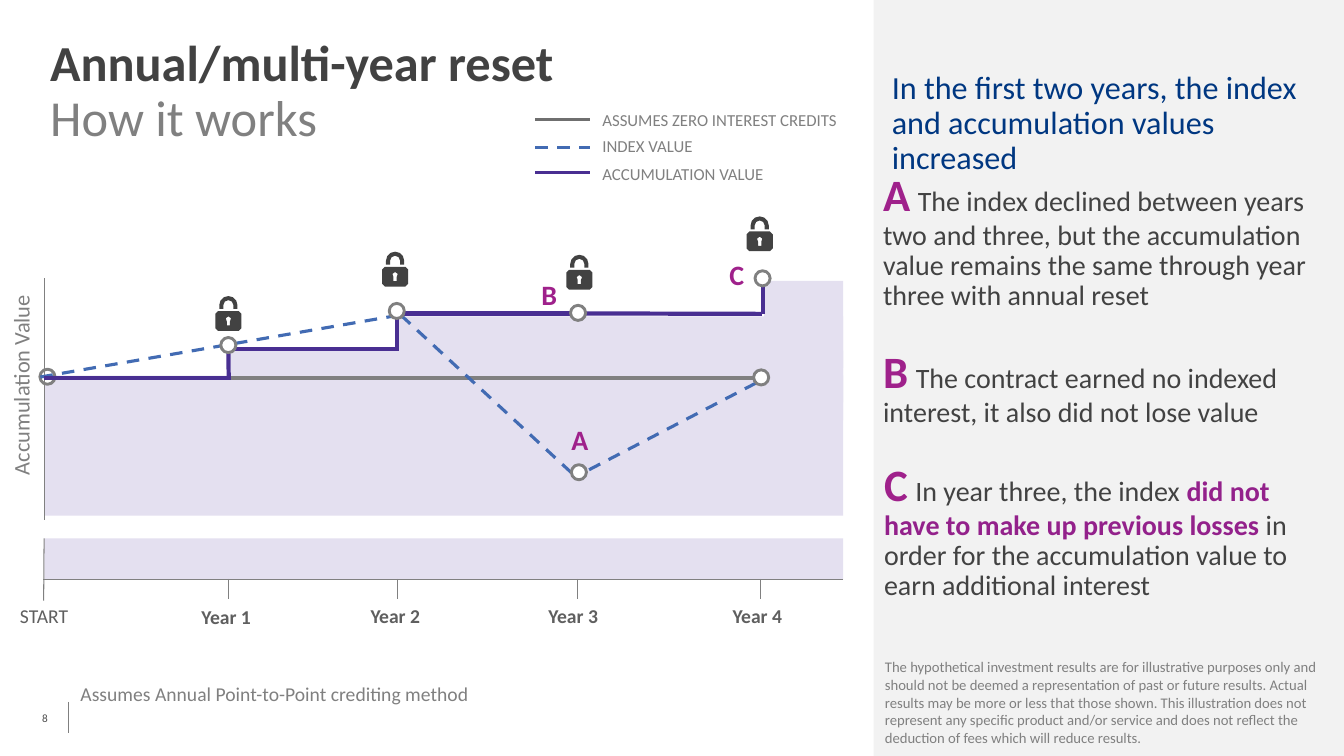
"""Build the annual/multi-year reset slide with its step diagram and side panel."""
from dataclasses import dataclass
from math import cos, radians, sin
from typing import Optional

from lxml.etree import SubElement
from pptx import Presentation
from pptx.dml.color import RGBColor
from pptx.enum.dml import MSO_LINE
from pptx.enum.shapes import MSO_CONNECTOR, MSO_SHAPE
from pptx.enum.text import MSO_ANCHOR, PP_ALIGN
from pptx.oxml.ns import qn
from pptx.util import Pt


@dataclass(frozen=True)
class Theme:
    """Colours, font and type sizes of the slide."""
    font: str = "Calibri"
    white: str = "FFFFFF"
    panel: str = "F2F2F2"
    band: str = "E4E0F0"
    dark: str = "424242"
    grey: str = "808080"
    zero: str = "6F6F6F"
    axis_text: str = "5F5F5F"
    page: str = "4D4D4D"
    navy: str = "003781"
    gap_color: str = "113388"
    index: str = "426BB3"
    accum: str = "492F92"
    magenta: str = "9F218B"
    stress: str = "93218B"
    title: float = 36
    letter: float = 32
    gap: float = 24
    heading: float = 23
    body: float = 20
    axis: float = 16
    label: float = 14
    legend: float = 12
    small: float = 10.5
    number: float = 8


T = Theme()


@dataclass(frozen=True)
class Span:
    """A run of text in one style."""
    text: str
    size: float
    color: str
    bold: bool = False


@dataclass(frozen=True)
class Text:
    """A text box with its paragraphs of spans."""
    x: float
    y: float
    w: float
    h: float
    paras: tuple[tuple[Span, ...], ...]
    spacing: Optional[float] = 0.9
    rotation: float = 0
    centred: bool = False


@dataclass(frozen=True)
class Line:
    """A straight line between two points."""
    x1: float
    y1: float
    x2: float
    y2: float
    color: str = T.grey
    width: float = 0.75
    dashed: bool = False


@dataclass(frozen=True)
class Box:
    """A filled rectangle."""
    x: float
    y: float
    w: float
    h: float
    color: str = T.band


def rgb(color: str) -> RGBColor:
    """Turn a hex string into a colour."""
    return RGBColor.from_string(color)


def draw_text(s, t: Text):
    """Draw a text box and return its frame."""
    sp = s.shapes.add_textbox(Pt(t.x), Pt(t.y), Pt(t.w), Pt(t.h))
    sp.rotation = t.rotation
    tf = sp.text_frame
    tf.word_wrap = True
    for i, spans in enumerate(t.paras):
        p = tf.add_paragraph() if i else tf.paragraphs[0]
        p.line_spacing = t.spacing
        p.alignment = PP_ALIGN.CENTER if t.centred else PP_ALIGN.LEFT
        for span in spans:
            r = p.add_run()
            r.text = span.text
            r.font.name = T.font
            r.font.size = Pt(span.size)
            r.font.bold = span.bold
            r.font.color.rgb = rgb(span.color)
    return tf


def draw_line(s, ln: Line) -> None:
    """Draw a line without shadow."""
    cn = s.shapes.add_connector(MSO_CONNECTOR.STRAIGHT, Pt(ln.x1), Pt(ln.y1), Pt(ln.x2), Pt(ln.y2))
    cn.line.color.rgb = rgb(ln.color)
    cn.line.width = Pt(ln.width)
    if ln.dashed:
        cn.line.dash_style = MSO_LINE.DASH
    SubElement(cn._element.spPr, qn("a:effectLst"))


def fill_plain(sp, color: str) -> None:
    """Give a shape a flat fill with no outline or shadow."""
    sp.shadow.inherit = False
    sp.fill.solid()
    sp.fill.fore_color.rgb = rgb(color)
    sp.line.fill.background()


def draw_box(s, b: Box) -> None:
    """Draw a filled rectangle."""
    fill_plain(s.shapes.add_shape(MSO_SHAPE.RECTANGLE, Pt(b.x), Pt(b.y), Pt(b.w), Pt(b.h)), b.color)


def draw_marker(s, x: float, y: float) -> None:
    """Draw a ring centred on a data point."""
    sp = s.shapes.add_shape(MSO_SHAPE.OVAL, Pt(x - 5.4), Pt(y - 5.4), Pt(10.8), Pt(10.8))
    fill_plain(sp, T.white)
    sp.line.color.rgb = rgb(T.grey)
    sp.line.width = Pt(2.08)


def arc(cx: float, cy: float, rad: float, start: int, end: int, steps: int) -> list[tuple[float, float]]:
    """Return points along an arc, in degrees clockwise from the right."""
    angles = [radians(start + (end - start) * i / steps) for i in range(steps + 1)]
    return [(cx + rad * cos(a), cy + rad * sin(a)) for a in angles]


def draw_lock(s, x: float, y: float) -> None:
    """Draw a padlock from its body, keyhole and shackle outlines."""
    body = [pt for cx, cy, a in ((2, 12.8, 180), (16.7, 12.8, 270), (16.7, 22.9, 0), (2, 22.9, 90))
            for pt in arc(cx, cy, 2, a, a + 90, 1)]
    keyhole = arc(9.35, 16.5, 2, 125, 415, 4) + [(10.5, 21), (8.2, 21)]
    shackle = (arc(9.35, 6.5, 6.5, 180, 360, 6) + [(15.85, 9.2), (12.95, 9.2)]
               + arc(9.35, 6.5, 3.6, 360, 180, 4) + [(5.75, 9.2), (2.85, 9.2)])
    fb = None
    for outline in (body, keyhole, shackle):
        pts = [(Pt(x + px), Pt(y + py)) for px, py in outline]
        if fb is None:
            fb = s.shapes.build_freeform(*pts[0], scale=1.0)
        else:
            fb.move_to(*pts[0])
        fb.add_line_segments(pts[1:], close=True)
    fill_plain(fb.convert_to_shape(), T.dark)


def callout(x: float, y: float, h: float, letter: str, *spans: Span) -> Text:
    """Describe a side-panel paragraph led by a large letter."""
    lead = (Span(letter, T.letter, T.magenta, True), Span(" ", T.gap, T.gap_color, letter == "A"))
    return Text(x, y, 321.1, h, (lead + spans,))


def plain(x: float, y: float, w: float, h: float, text: str, size: float, color: str,
          bold: bool = False, **extra) -> Text:
    """Describe a text box holding a single span."""
    return Text(x, y, w, h, ((Span(text, size, color, bold),),), **extra)


BOXES = [Box(624, 0, 336, 540, T.panel), Box(31.7, 268.4, 570.6, 100), Box(545.8, 200.7, 56.5, 99.4),
         Box(164.9, 250.6, 437.4, 36.7), Box(284.4, 226, 317.9, 36.7), Box(31.7, 384.5, 570.6, 29.5)]
TICKS = [163.4, 283.7, 412.6, 542.9]
AXES = [Line(49, 501.3, 49, 523.5), Line(31.7, 198.7, 31.7, 371.5), Line(31, 414, 602.3, 414),
        Line(31.5, 384.5, 31.2, 429)] + [Line(x, 413.5, x, 427.7) for x in TICKS]
INDEX = [Line(*ends, T.index, 2.25, True) for ends in (
    (28.8, 269.3, 280, 226), (408.2, 337.7, 287.3, 226), (540, 273.6, 409.7, 341.3))]
STEPS = [Line(*ends, T.accum, 3) for ends in (
    (31.7, 269.8, 163.4, 269.8), (163.1, 247.7, 163.4, 271.4), (159, 249.1, 285.1, 249.1),
    (283.7, 220.3, 283.7, 249.1), (279.4, 223.9, 409, 223.9), (412.6, 223.9, 544.3, 224.2),
    (545, 201, 545, 224.6))]
START = (33.9, 269.1)
MARKERS = [(163.1, 246.5), (283.4, 222.1), (412.9, 223.5), (413.5, 337.3), (543.7, 269.6), (544.7, 198.8)]
LOCKS = [(153.8, 211.5), (272.9, 179.8), (404.5, 182), (533.3, 154.6)]
LEGEND = [("ASSUMES ZERO INTEREST CREDITS", 85.2, 76.4, T.zero, False),
          ("INDEX VALUE", 105.1, 94.8, T.index, True),
          ("ACCUMULATION VALUE", 123.1, 114.9, T.accum, False)]
YEARS = [("Year 1", 136.8, 430.4), ("Year 2", 257.6, 429.5), ("Year 3", 384.7, 429.5), ("Year 4", 516.2, 429.5)]
POINTS = [("A", 401, 301), ("B", 379.6, 197.3), ("C", 513.9, 182.9)]
TEXTS = [
    Text(28.8, 23.8, 554.4, 80.6, ((Span("Annual/multi-year reset", T.title, T.dark, True),),
                                   (Span("How it works", T.title, T.grey),))),
    plain(629.9, 47.8, 334.8, 58.3, "In the first two years, the index and accumulation values increased",
          T.heading, T.navy),
    callout(623.7, 119.9, 107.3, "A", Span(
        "The index declined between years two and three, but the accumulation value remains the same "
        "through year three with annual reset", T.body, T.dark)),
    callout(623.7, 246.2, 61.9, "B", Span(
        "The contract earned no indexed interest, it also did not lose value", T.body, T.dark)),
    callout(624.4, 326.9, 107.3, "C", Span("In year three, the index ", T.body, T.dark),
            Span("did not have to make up previous losses ", T.body, T.stress, True),
            Span("in order for the accumulation value to earn additional interest", T.body, T.dark)),
    plain(625, 466.6, 334.8, 56.2,
          "The hypothetical investment results are for illustrative purposes only and should not be deemed a "
          "representation of past or future results. Actual results may be more or less that those shown. "
          "This illustration does not represent any specific product and/or service and does not reflect "
          "the deduction of fees which will reduce results.", T.small, T.grey, spacing=None),
    plain(50.4, 485.3, 502.6, 29.5, "Assumes Annual Point-to-Point crediting method", T.label, T.grey),
    plain(-63.4, 263.2, 158.4, 23.8, "Accumulation Value", T.axis, T.grey, rotation=270, centred=True),
    plain(7.2, 429.5, 82.1, 21.6, "START", T.label, T.axis_text),
    *[plain(x, y, 54.7, 21.6, text, T.label, T.axis_text, True) for text, x, y in YEARS],
    *[plain(x, y, 40, 20.2, text, T.body, T.magenta, True) for text, x, y in POINTS],
    *[plain(423.2, y, 211.7, 12.2, text, T.legend, T.grey) for text, _, y, _, _ in LEGEND],
]


def main() -> None:
    """Assemble the slide and save it."""
    prs = Presentation()
    prs.slide_width, prs.slide_height = Pt(960), Pt(540)
    s = prs.slides.add_slide(prs.slide_layouts[6])
    for b in BOXES:
        draw_box(s, b)
    draw_marker(s, *START)
    key = [Line(382.3, y, 421.6, y, color, 2.25, dashed) for _, y, _, color, dashed in LEGEND]
    for ln in AXES + key + [Line(33.8, 270, 543.6, 270, T.grey, 2.5)] + INDEX + STEPS:
        draw_line(s, ln)
    for x, y in MARKERS:
        draw_marker(s, x, y)
    for x, y in LOCKS:
        draw_lock(s, x, y)
    for t in TEXTS:
        draw_text(s, t)
    tf = draw_text(s, plain(30.2, 498.2, 28.8, 28.8, "8", T.number, T.page, spacing=None))
    tf.margin_left = tf.margin_right = Pt(0)
    tf.vertical_anchor = MSO_ANCHOR.MIDDLE
    prs.save("out.pptx")


if __name__ == "__main__":
    main()
